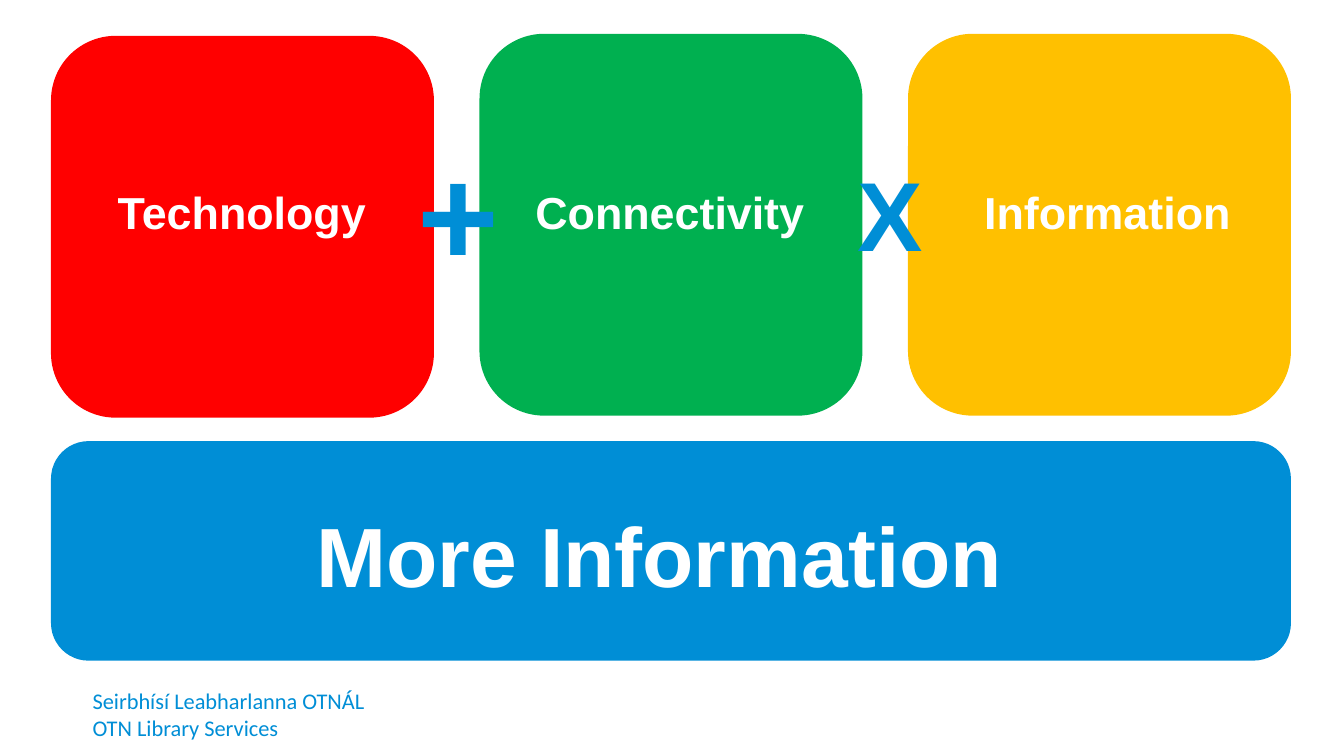
from pptx import Presentation
from pptx.dml.color import RGBColor
from pptx.enum.shapes import MSO_SHAPE as Shape
from pptx.enum.text import MSO_AUTO_SIZE as Fit, PP_ALIGN as Align
from pptx.util import Inches, Pt

RED = RGBColor(0xFF, 0x00, 0x00)
GREEN = RGBColor(0x00, 0xB0, 0x50)
AMBER = RGBColor(0xFF, 0xC0, 0x00)
BLUE = RGBColor(0x00, 0x8E, 0xD6)
WHITE = RGBColor(0xFF, 0xFF, 0xFF)

deck = Presentation()
deck.slide_width, deck.slide_height = Inches(13.33), Inches(7.5)
slide = deck.slides.add_slide(deck.slide_layouts[6])


def add_card(left, top, width, height, color):
    card = slide.shapes.add_shape(
        Shape.ROUNDED_RECTANGLE,
        Inches(left), Inches(top), Inches(width), Inches(height))
    card.shadow.inherit = False
    card.fill.solid()
    card.fill.fore_color.rgb = color
    card.line.color.rgb = color
    card.line.width = Pt(2)


def add_text(text, left, top, width, height, size=32, color=WHITE,
             font="Arial", bold=True, align=Align.CENTER):
    box = slide.shapes.add_textbox(
        Inches(left), Inches(top), Inches(width), Inches(height))
    frame = box.text_frame
    frame.word_wrap = True
    frame.auto_size = Fit.SHAPE_TO_FIT_TEXT
    para = frame.paragraphs[0]
    para.text = text
    para.alignment = align
    for run in para.runs:
        run.font.name = font
        run.font.size = Pt(size)
        run.font.bold = bold
        run.font.color.rgb = color


for col, (top, color) in enumerate([(0.37, RED), (0.35, GREEN), (0.35, AMBER)]):
    add_card(0.52 + col * 4.25, top, 3.77, 3.76, color)
add_card(0.52, 4.39, 12.27, 2.15, BLUE)

for word, left, width in [("Technology", 0.97, 2.86),
                          ("Connectivity", 5.13, 3.03),
                          ("Information", 9.47, 3.03)]:
    add_text(word, left, 1.78, width, 0.64)
add_text("More Information", 2.76, 4.95, 7.56, 1.11, size=60)

for sign, left, top, height, size in [("X", 8.41, 1.47, 1.28, 70),
                                      ("+", 4.04, 1.21, 1.78, 100)]:
    add_text(sign, left, top, 1.06, height, size=size, color=BLUE,
             align=Align.LEFT)

add_text("Seirbhísí Leabharlanna OTNÁL\nOTN Library Services",
         0.82, 6.77, 6.67, 0.64, size=16, color=BLUE, font="Calibri",
         bold=False, align=Align.LEFT)

deck.save("out.pptx")
